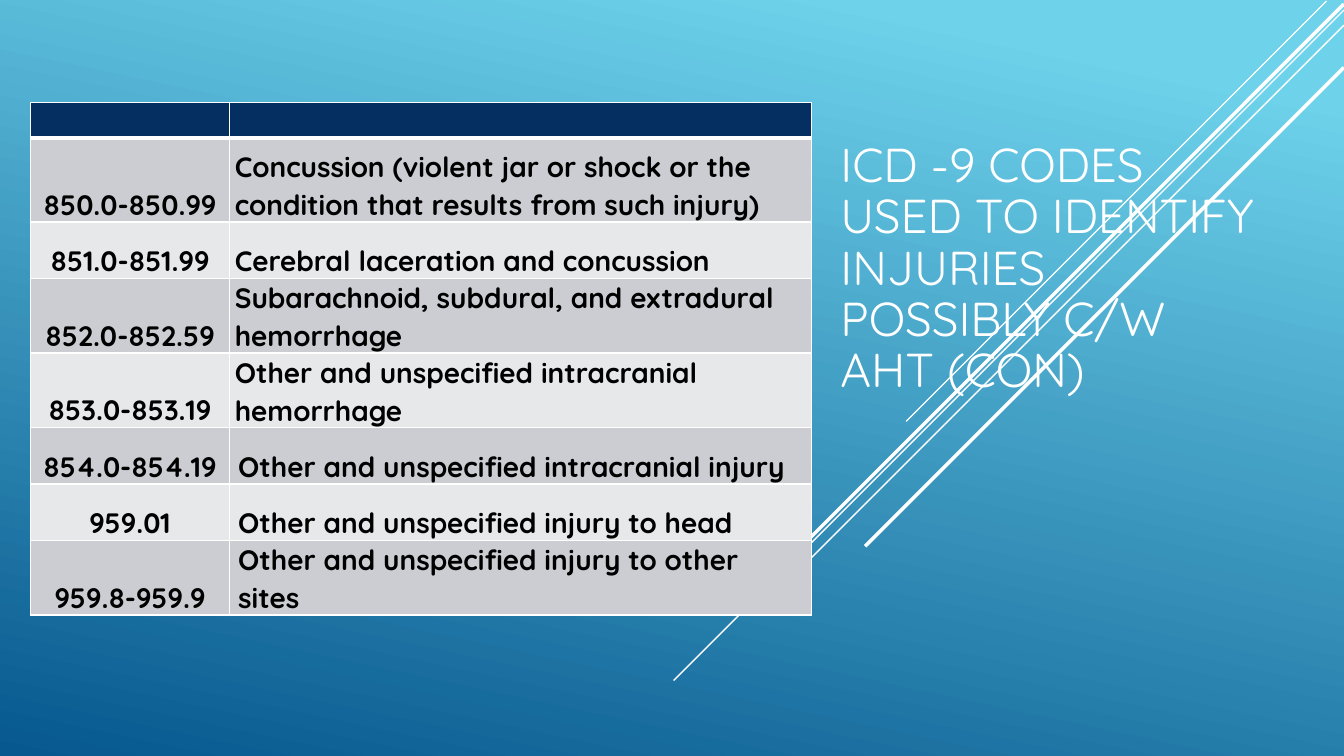
from dataclasses import dataclass

from lxml import etree
from pptx import Presentation
from pptx import util as u
from pptx.dml.color import RGBColor
from pptx.enum import shapes, text
from pptx.oxml.ns import qn


@dataclass(frozen=True)
class Theme:
    """Colours, font and type sizes of the slide."""
    font: str = "Quicksand"
    sky: str = "6ED2EB"
    deep: str = "06588E"
    white: str = "FFFFFF"
    black: str = "000000"
    header: str = "052F61"
    bands: tuple = ("CCCDD2", "E7E8EA")
    title_size: int = 34
    body_size: int = 20


THEME = Theme()
COLUMNS, ROWS = 40, 22.5
HEADER_HEIGHT = 1.05
ONE_LINE, TWO_LINES = 1.68, 2.22
NARROW, WIDE = 0.15, 0.25
CODES = [
    ("850.0-850.99", "Concussion (violent jar or shock or the condition that results from such injury)", 2.5, NARROW),
    ("851.0-851.99", "Cerebral laceration and concussion", ONE_LINE, NARROW),
    ("852.0-852.59", "Subarachnoid, subdural, and extradural hemorrhage", TWO_LINES, NARROW),
    ("853.0-853.19", "Other and unspecified intracranial hemorrhage", TWO_LINES, NARROW),
    ("854.0-854.19", "Other and unspecified intracranial injury", ONE_LINE, WIDE),
    ("959.01", "Other and unspecified injury to head", ONE_LINE, WIDE),
    ("959.8-959.9", "Other and unspecified injury to other sites", TWO_LINES, WIDE),
]
RAYS = [
    (39.48, 0.03, 12.51, 1),
    (40, 0.3, 19.95, 1),
    (40, 0.75, 16.26, 1),
    (40, 0.12, 15.9, 2.5),
    (40, 2.01, 14.25, 2.5),
]


def grid(units):
    """Convert grid units of a third of an inch to a length."""
    return u.Inches(units / 3)


def rgb(colour):
    """Turn a hex string into a colour."""
    return RGBColor.from_string(colour)


def style(paragraph, size, colour, spacing, bold=False):
    """Apply the theme font and the line spacing to a paragraph."""
    paragraph.line_spacing = spacing
    paragraph.font.name = THEME.font
    paragraph.font.size = u.Pt(size)
    paragraph.font.bold = bold
    paragraph.font.color.rgb = rgb(colour)


def paint_background(slide):
    """Fill the background with the slanted blue gradient."""
    fill = slide.background.fill
    fill.gradient()
    fill.gradient_angle = 258
    for stop, colour, position in zip(fill.gradient_stops, (THEME.sky, THEME.deep), (0.1, 1)):
        stop.color.rgb = rgb(colour)
        stop.position = position


def add_ray(slide, right, top, reach, weight):
    """Draw a white diagonal running down and left at 45 degrees."""
    ray = slide.shapes.add_connector(
        shapes.MSO_CONNECTOR.STRAIGHT,
        grid(right), grid(top), grid(right - reach), grid(top + reach))
    ray.line.color.rgb = rgb(THEME.white)
    ray.line.width = u.Pt(weight)
    etree.SubElement(ray._element.spPr, qn("a:effectLst"))


def add_title(slide, wording):
    """Place the title at the right, resting on the bottom of its box."""
    title = slide.shapes.add_textbox(grid(24.72), grid(2.07), grid(13.02), grid(9.93))
    frame = title.text_frame
    frame.word_wrap = True
    frame.vertical_anchor = text.MSO_ANCHOR.BOTTOM
    frame.text = wording
    style(frame.paragraphs[0], THEME.title_size, THEME.white, 0.9)


def set_borders(cell, top=1, bottom=1):
    """Give a cell white borders of the given weights in points."""
    properties = cell._tc.get_or_add_tcPr()
    for side, weight in zip("LRTB", (1, 1, top, bottom)):
        border = etree.SubElement(properties, qn(f"a:ln{side}"), w=str(u.Pt(weight)))
        solid = etree.SubElement(border, qn("a:solidFill"))
        etree.SubElement(solid, qn("a:srgbClr"), val=THEME.white)


def fill_cell(cell, wording, colour, inset, alignment):
    """Colour a cell and set its wording along the bottom edge."""
    cell.fill.solid()
    cell.fill.fore_color.rgb = rgb(colour)
    cell.margin_left = cell.margin_right = grid(inset)
    cell.margin_top = cell.margin_bottom = 0
    cell.vertical_anchor = text.MSO_ANCHOR.BOTTOM
    cell.text = wording
    paragraph = cell.text_frame.paragraphs[0]
    paragraph.alignment = alignment
    style(paragraph, THEME.body_size, THEME.black, 1.07 if wording else 1, True)


def add_codes(slide):
    """Add the table of diagnosis codes with banded rows."""
    widths = (5.94, 17.31)
    entries = [("", "", HEADER_HEIGHT, WIDE), *CODES]
    height = sum(entry[2] for entry in entries)
    codes = slide.shapes.add_table(
        len(entries), len(widths), grid(0.9), grid(3.06), grid(sum(widths)), grid(height)).table
    for column, width in zip(codes.columns, widths):
        column.width = grid(width)
    for index, (code, injury, row_height, inset) in enumerate(entries):
        codes.rows[index].height = grid(row_height)
        colour = THEME.bands[(index - 1) % 2] if index else THEME.header
        for cell in codes.rows[index].cells:
            set_borders(cell, top=3 if index == 1 else 1, bottom=1 if index else 3)
        fill_cell(codes.cell(index, 0), code, colour, WIDE, text.PP_ALIGN.CENTER)
        fill_cell(codes.cell(index, 1), injury, colour, inset, text.PP_ALIGN.LEFT)


def main():
    """Build the slide and save it."""
    deck = Presentation()
    deck.slide_width, deck.slide_height = grid(COLUMNS), grid(ROWS)
    slide = deck.slides.add_slide(deck.slide_layouts[6])
    paint_background(slide)
    for ray in RAYS:
        add_ray(slide, *ray)
    add_title(slide, "ICD -9 CODES USED TO IDENTIFY INJURIES POSSIBLY C/W AHT (CON)")
    add_codes(slide)
    deck.save("out.pptx")


if __name__ == "__main__":
    main()
